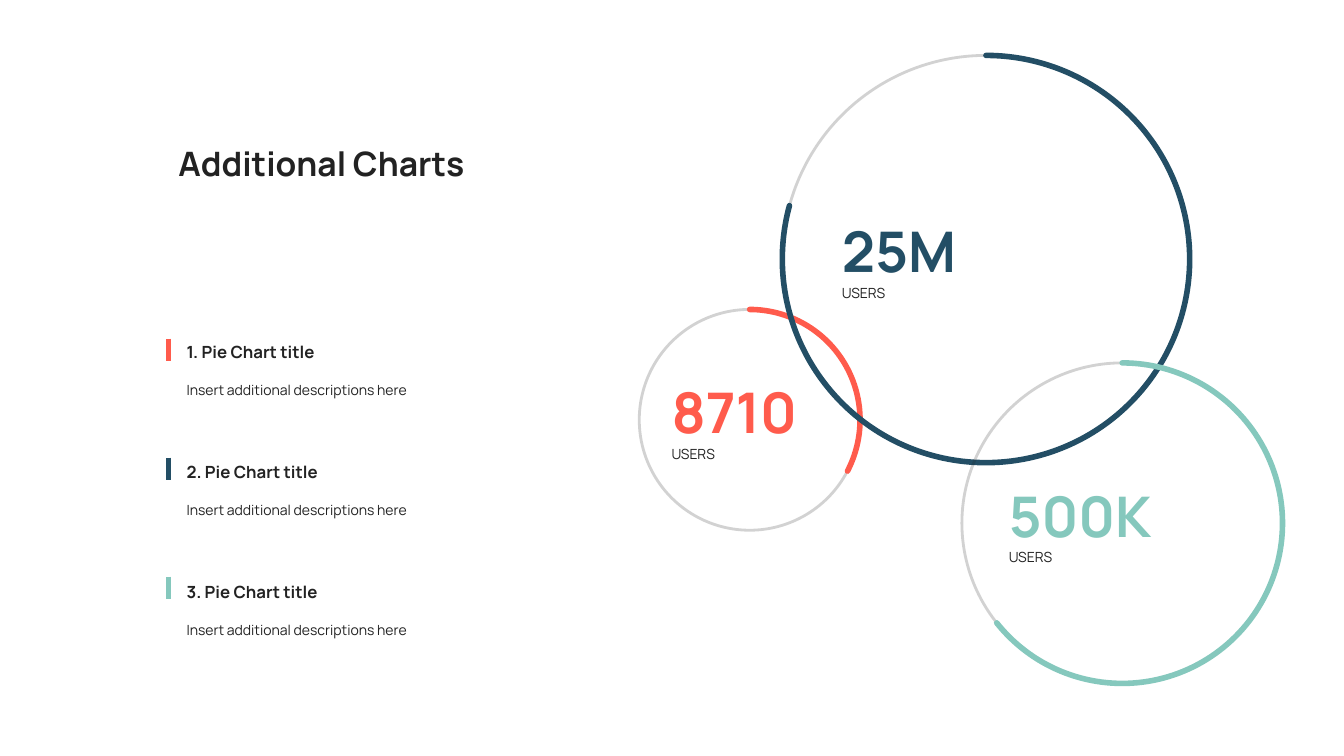
from dataclasses import dataclass

from pptx import Presentation
from pptx.dml.color import RGBColor as Rgb
from pptx.enum.shapes import MSO_CONNECTOR as Link, MSO_SHAPE as Form
from pptx.enum.text import MSO_ANCHOR as Anchor, MSO_AUTO_SIZE as Fit, PP_ALIGN as Align
from pptx.oxml.ns import qn
from pptx.oxml.xmlchemy import OxmlElement as Node
from pptx.util import Inches, Pt


@dataclass(frozen=True)
class Theme:
    """Colours, font and type sizes of the slide."""
    font: str = "Manrope"
    ink: str = "222222"
    red: str = "FF5B4C"
    navy: str = "234E65"
    teal: str = "85C8BD"
    title: int = 24
    value: int = 40
    head: int = 12
    body: int = 10
    thin: int = 2
    thick: int = 4


class Board:
    """Draws rings, bars and text on one slide in one style."""

    def __init__(self, slide, theme):
        self.shapes = slide.shapes
        self.theme = theme

    def label(self, frame, lines, pads=(0, 0), space=None, gap=0):
        """Fill a text frame with (text, size, colour, bold) lines."""
        frame.word_wrap = True
        frame.margin_left = frame.margin_right = Inches(pads[0])
        frame.margin_top = frame.margin_bottom = Inches(pads[1])
        for i, (text, size, tint, bold) in enumerate(lines):
            para = frame.add_paragraph() if i else frame.paragraphs[0]
            para.text = text
            para.alignment = Align.LEFT
            para.line_spacing = space
            if i and gap:
                para.space_before = Pt(gap)
            font = para.font
            font.name, font.size, font.bold = self.theme.font, Pt(size), bold
            font.color.rgb = Rgb.from_string(tint)

    def stroke(self, shape, tint, width):
        """Set the outline and return its XML element."""
        shape.line.color.rgb = Rgb.from_string(tint)
        shape.line.width = Pt(width)
        return shape.element.spPr.find(qn("a:ln"))

    def outline(self, form, box, tint, width):
        """Add an unfilled preset shape and return it with its line."""
        shape = self.shapes.add_shape(form, *map(Inches, box))
        shape.shadow.inherit = False
        shape.fill.background()
        return shape, self.stroke(shape, tint, width)

    def ring(self, left, top, size, angle, value, tint):
        """Add a pale circle with its value and an arc ending at an angle."""
        look, box = self.theme, (left, top, size, size)
        disc, line = self.outline(Form.OVAL, box, look.ink, look.thin)
        alpha = Node("a:alpha")
        alpha.set("val", "20000")
        line.find(".//" + qn("a:srgbClr")).append(alpha)
        disc.text_frame.vertical_anchor = Anchor.MIDDLE
        self.label(disc.text_frame, [(value, look.value, tint, True),
                                     ("USERS", look.body, look.ink, False)], (0, 0.05))
        arc, line = self.outline(Form.ARC, box, tint, look.thick)
        line.set("cap", "rnd")
        arc.adjustments[0] = 270 * 0.6
        arc.adjustments[1] = angle * 0.6

    def bar(self, left, top, size, tint):
        """Add a short upright marker line."""
        ends = map(Inches, (left, top, left, top + size))
        line = self.shapes.add_connector(Link.STRAIGHT, *ends)
        self.stroke(line, tint, self.theme.thick)
        line.element.spPr.append(Node("a:effectLst"))

    def note(self, box, lines, **style):
        """Add a text box and return its frame."""
        frame = self.shapes.add_textbox(*map(Inches, box)).text_frame
        self.label(frame, lines, **style)
        return frame


def main():
    """Build and save the slide."""
    deck = Presentation()
    deck.slide_width, deck.slide_height = Inches(13.33), Inches(7.5)
    look = Theme()
    board = Board(deck.slides.add_slide(deck.slide_layouts[6]), look)

    board.note((1.67, 1.37, 5, 1.12),
               [("Additional Charts", look.title, look.ink, True)], pads=(0.1, 0.05))

    rings = [
        (6.34, 3.07, 2.19, 27.66, "8710", look.red),
        (7.76, 0.55, 4.04, 195.21, "25M", look.navy),
        (9.54, 3.6, 3.18, 141.52, "500K", look.teal),
    ]
    for i, ring in enumerate(rings):
        board.ring(*ring)
        frame = board.note((1.85, 3.35 + 1.19 * i, 2.99, 0.6), [
            (f"{i + 1}. Pie Chart title", look.head, look.ink, True),
            ("Insert additional descriptions here", look.body, look.ink, False),
        ], space=1.2, gap=12)
        frame.auto_size = Fit.SHAPE_TO_FIT_TEXT
        board.bar(1.67, 3.36 + 1.18 * i, 0.22, ring[-1])

    deck.save("out.pptx")


if __name__ == "__main__":
    main()
